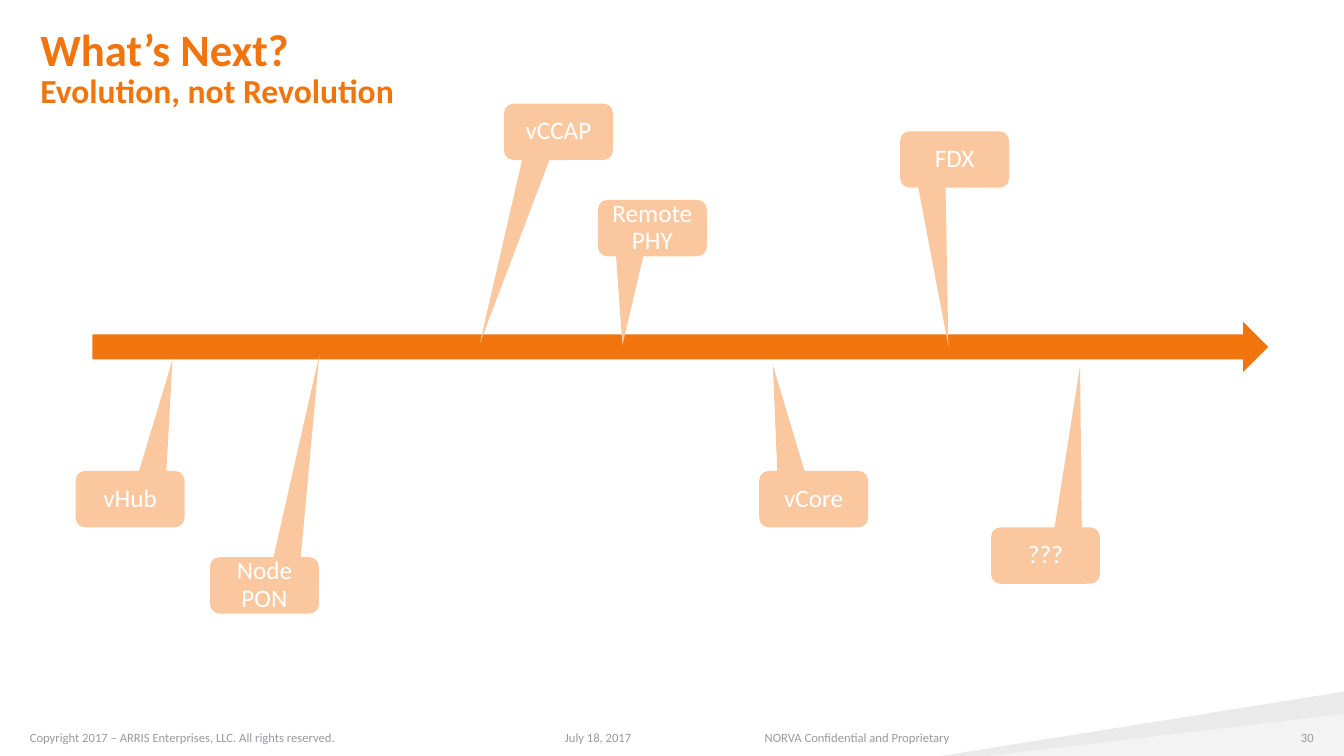
from dataclasses import dataclass

from pptx import Presentation
from pptx.dml.color import RGBColor
from pptx.enum.shapes import MSO_SHAPE
from pptx.enum.text import MSO_ANCHOR, MSO_AUTO_SIZE, PP_ALIGN
from pptx.util import Pt


@dataclass(frozen=True)
class Theme:
    font: str = "Calibri"
    orange: str = "F1740D"
    peach: str = "FAC79E"
    white: str = "FFFFFF"
    gray: str = "9A9A9D"
    facet_dark: str = "EAEAEA"
    facet_light: str = "F3F3F3"
    title_size: int = 32
    subtitle_size: int = 24
    label_size: int = 18
    footer_size: int = 9


theme = Theme()


def paint(shape, color):
    shape.shadow.inherit = False
    shape.fill.solid()
    shape.fill.fore_color.rgb = RGBColor.from_string(color)
    shape.line.fill.background()


def add_span(para, text, size, color, bold=False):
    span = para.add_run()
    span.text = text
    span.font.name = theme.font
    span.font.size = Pt(size)
    span.font.bold = bold
    span.font.color.rgb = RGBColor.from_string(color)


deck = Presentation()
deck.slide_width, deck.slide_height = Pt(960), Pt(540)
page = deck.slides.add_slide(deck.slide_layouts[5])
shapes = page.shapes

# Corner facets
for left, top, color in [
    (672, 494, theme.facet_dark),
    (705.6, 509.8, theme.facet_light),
]:
    builder = shapes.build_freeform(960, top, scale=Pt(1))
    builder.add_line_segments([(960, 540), (left, 540)], close=True)
    paint(builder.convert_to_shape(), color)

# Title and subtitle
title = shapes.title
title.left, title.top, title.width, title.height = Pt(21.6), Pt(21.6), Pt(708), Pt(72)
frame = title.text_frame
frame.word_wrap = True
frame.auto_size = MSO_AUTO_SIZE.NONE
frame.vertical_anchor = MSO_ANCHOR.TOP
frame.margin_left = frame.margin_right = Pt(7.2)
frame.margin_top = frame.margin_bottom = 0
para = frame.paragraphs[0]
para.alignment = PP_ALIGN.LEFT
para.line_spacing = 0.85
add_span(para, "What’s Next?", theme.title_size, theme.orange, bold=True)
para.add_line_break()
add_span(para, "Evolution, not Revolution", theme.subtitle_size, theme.orange, bold=True)

# Footer row
for text, left, width, alignment in [
    ("Copyright 2017 – ARRIS Enterprises, LLC. All rights reserved.", 21.3, 300, PP_ALIGN.LEFT),
    ("July 18, 2017", 312, 230.4, PP_ALIGN.CENTER),
    ("NORVA Confidential and Proprietary", 546.2, 350, PP_ALIGN.LEFT),
    ("30", 896, 42.4, PP_ALIGN.RIGHT),
]:
    box = shapes.add_textbox(Pt(left), Pt(517.7), Pt(width), Pt(14.4))
    frame = box.text_frame
    frame.word_wrap = True
    frame.vertical_anchor = MSO_ANCHOR.BOTTOM
    frame.margin_left = frame.margin_right = frame.margin_top = frame.margin_bottom = 0
    para = frame.paragraphs[0]
    para.alignment = alignment
    add_span(para, text, theme.footer_size, theme.gray)

# Timeline arrow
timeline = shapes.add_shape(MSO_SHAPE.RIGHT_ARROW, Pt(66), Pt(229.8), Pt(840), Pt(36))
paint(timeline, theme.orange)

# Milestone callouts: label, left, top, and the point each wedge reaches
callout_width, callout_height = 77.8, 40.3
for label, left, top, tip_x, tip_y in [
    ("vCCAP", 360, 74, 342.7, 245.4),
    ("Remote PHY", 427.1, 142.8, 444.6, 246.5),
    ("vHub", 54, 336.4, 123.2, 257.3),
    ("Node PON", 150, 398, 228.1, 253.4),
    ("vCore", 542.3, 336.4, 552, 260.7),
    ("FDX", 643, 93.8, 677.4, 247.2),
    ("???", 707.9, 376.7, 771.5, 261.5),
]:
    callout = shapes.add_shape(
        MSO_SHAPE.ROUNDED_RECTANGULAR_CALLOUT,
        Pt(left), Pt(top), Pt(callout_width), Pt(callout_height),
    )
    callout.adjustments[0] = (tip_x - left) / callout_width - 0.5
    callout.adjustments[1] = (tip_y - top) / callout_height - 0.5
    paint(callout, theme.peach)
    frame = callout.text_frame
    frame.word_wrap = True
    frame.vertical_anchor = MSO_ANCHOR.MIDDLE
    para = frame.paragraphs[0]
    para.alignment = PP_ALIGN.CENTER
    para.line_spacing = 0.9
    add_span(para, label, theme.label_size, theme.white)

deck.save("out.pptx")
